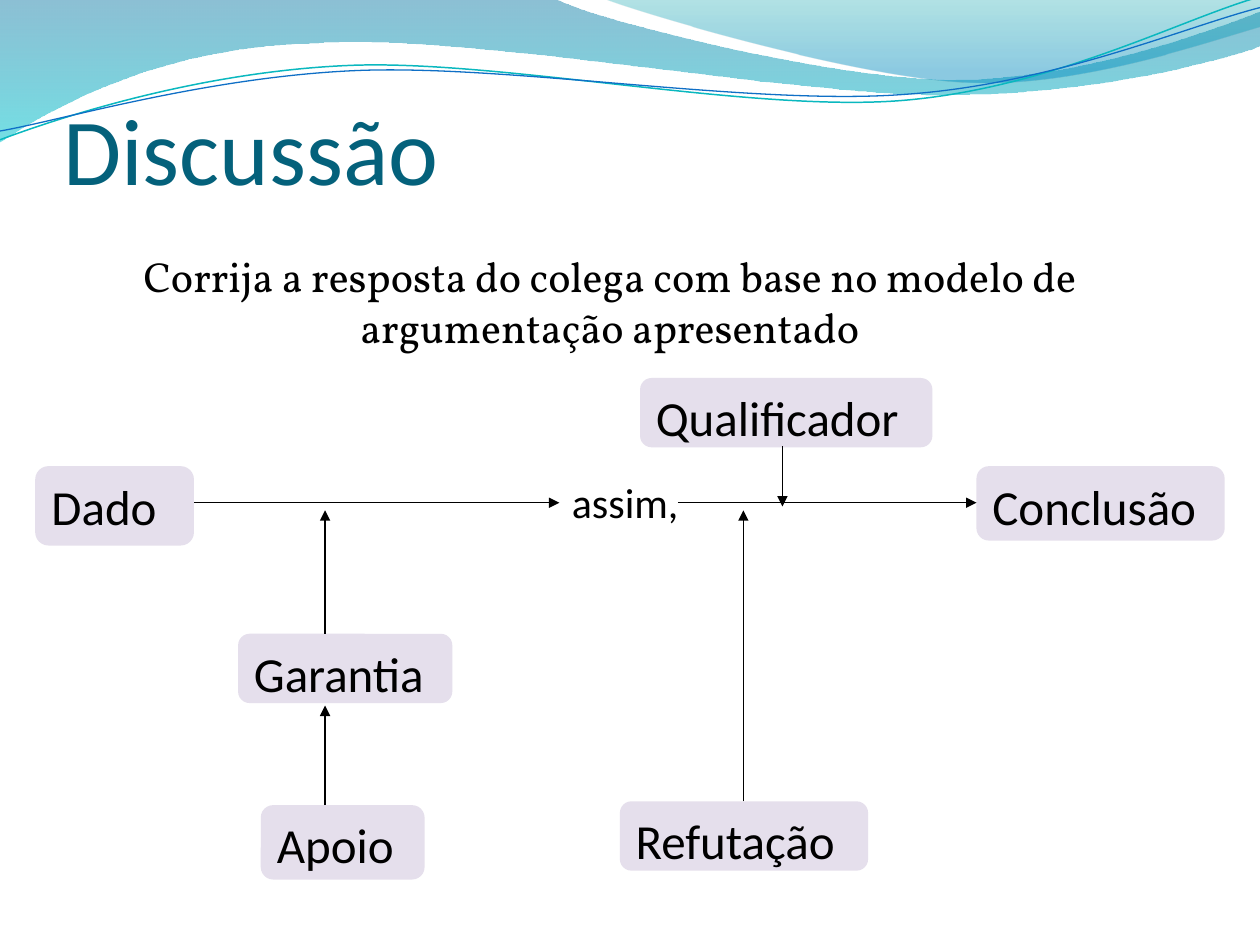
from dataclasses import dataclass
from math import cos, radians, sin

from lxml import etree
from pptx import Presentation
from pptx.dml.color import RGBColor
from pptx.enum.shapes import MSO_CONNECTOR, MSO_SHAPE
from pptx.enum.text import MSO_ANCHOR, MSO_AUTO_SIZE, PP_ALIGN
from pptx.oxml import parse_xml
from pptx.oxml.ns import nsdecls, qn
from pptx.util import Inches, Pt


@dataclass(frozen=True)
class Theme:
    """Colours, fonts and sizes of the slide."""
    title: str = "04617B"
    ink: str = "000000"
    box: str = "E5DFEC"
    blank: str = "FFFFFF"
    teal: str = "0AB8BF"
    blue: str = "0F6FC6"
    wave: tuple = ((0, "0074A1", 45), (100, "00C6CF", 55))
    crest: tuple = ((0, "00A1A9", 30), (80, "008BBF", 45))
    sans: str = "Calibri"
    serif: str = "Vollkorn"
    title_pt: int = 54
    node_pt: int = 28
    text_pt: int = 24
    line_pt: float = 0.75


THEME = Theme()
TILT = -2.7

WAVE = [(0, 0), (4.4, -0.01), (4.76, 0.17, 6.64, 0.63, 7.58, 0.63),
        (8.53, 0.63, 9.58, 0.26, 10, 0.09), (10.01, 0.36),
        (9.83, 0.44, 8.7, 0.76, 7.46, 0.75), (6.22, 0.75, 3.82, 0.28, 2.57, 0.34),
        (1.29, 0.36, 0.46, 0.83, -0.01, 1.13), (0, 0)]
CREST = [(4.79, -0.01), (5.09, 0.11, 6.82, 0.62, 7.69, 0.65),
         (8.56, 0.69, 9.61, 0.32, 10, 0.21), (10, 0), (4.79, -0.01)]
TEAL_CURVE = [(0, 1.11), (0.48, 0.93, 1.58, 0.57, 2.77, 0.52),
              (3.95, 0.47, 5.93, 0.89, 7.13, 0.8), (8.33, 0.71, 9.38, 0.15, 9.98, -0.02)]
BLUE_CURVE = [(0, 1.04), (0.47, 0.96, 1.64, 0.61, 2.83, 0.56),
              (4.03, 0.51, 5.97, 0.84, 7.17, 0.75), (8.36, 0.67, 9.41, 0.21, 10, 0.06)]

NODES = [("Dado", 0, 0.7, 1.26, 0.63), ("Conclusão", 7.47, 0.7, 1.97, 0.59),
         ("Garantia", 1.61, 2.03, 1.7, 0.55), ("Apoio", 1.79, 3.39, 1.3, 0.59),
         ("Refutação", 4.64, 3.36, 1.97, 0.55)]
ARROWS = [(1.26, 0.99, 4.16, 0.99), (2.3, 3.39, 2.3, 2.6), (5.1, 0.99, 7.47, 0.99),
          (5.62, 3.36, 5.62, 1.05), (2.3, 2.03, 2.3, 1.05), (5.93, 0.54, 5.93, 1.02)]


def rgb(value):
    """Turn a hex string into a colour."""
    return RGBColor.from_string(value)


def add_run(p, text, font, size, color):
    """Add one formatted run to a paragraph."""
    r = p.add_run()
    r.text = text
    r.font.name = font
    r.font.size = Pt(size)
    r.font.color.rgb = rgb(color)


def to_local(x, y, box, tilt):
    """Map a point on the slide into a tilted box."""
    left, top, width, height = box
    dx, dy = x - left - width / 2, y - top - height / 2
    a = radians(-tilt)
    return (Inches(dx * cos(a) - dy * sin(a) + width / 2),
            Inches(dx * sin(a) + dy * cos(a) + height / 2))


def add_curve(s, box, segments, tilt=0):
    """Build a freeform with cubic curves in the given box."""
    closed = segments[0] == segments[-1]
    ends = [tuple(map(Inches, seg[-2:])) for seg in segments]
    builder = s.shapes.build_freeform(*ends[0])
    builder.add_line_segments(ends[1:], close=closed)
    sp = builder.convert_to_shape()
    sp.shadow.inherit = False
    sp.fill.background()
    sp.left, sp.top, sp.width, sp.height = map(Inches, box)
    sp.rotation = tilt
    outline = next(sp.element.iter(qn("a:path")))
    for child in list(outline):
        outline.remove(child)
    outline.set("w", str(sp.width))
    outline.set("h", str(sp.height))
    for i, seg in enumerate(segments):
        tag = "a:moveTo" if i == 0 else "a:lnTo" if len(seg) == 2 else "a:cubicBezTo"
        step = etree.SubElement(outline, qn(tag))
        for x, y in zip(seg[::2], seg[1::2]):
            px, py = to_local(x, y, box, tilt)
            etree.SubElement(step, qn("a:pt"), x=str(px), y=str(py))
    if closed:
        etree.SubElement(outline, qn("a:close"))
    return sp


def set_gradient(sp, stops):
    """Fill a shape with a vertical, partly transparent gradient."""
    gs = "".join(f'<a:gs pos="{pos * 1000}"><a:srgbClr val="{color}">'
                 f'<a:alpha val="{alpha * 1000}"/></a:srgbClr></a:gs>'
                 for pos, color, alpha in stops)
    grad = parse_xml(f'<a:gradFill {nsdecls("a")}><a:gsLst>{gs}</a:gsLst>'
                     '<a:lin ang="5400000" scaled="0"/></a:gradFill>')
    old = sp.element.spPr.find(qn("a:noFill"))
    old.getparent().replace(old, grad)


def add_waves(s):
    """Draw the wave band along the top edge."""
    for box, path, stops in (((-0.01, -0.01, 10.02, 1.14), WAVE, THEME.wave),
                             ((4.79, -0.01, 5.21, 0.7), CREST, THEME.crest)):
        sp = add_curve(s, box, path)
        set_gradient(sp, stops)
        sp.line.fill.background()
    for box, path, color, width in (
            ((-0.02, 0.22, 10.02, 0.71), TEAL_CURVE, THEME.teal, 0.85),
            ((-0.02, 0.3, 10.03, 0.58), BLUE_CURVE, THEME.blue, THEME.line_pt)):
        sp = add_curve(s, box, path, TILT)
        sp.line.color.rgb = rgb(color)
        sp.line.width = Pt(width)


def add_title(s, left, top, width, height):
    """Place and format the title above the waves."""
    sp = s.shapes.title
    sp.element.getparent().append(sp.element)
    sp.left, sp.top, sp.width, sp.height = map(Inches, (left, top, width, height))
    tf = sp.text_frame
    tf.vertical_anchor = MSO_ANCHOR.BOTTOM
    tf.margin_left = tf.margin_right = tf.margin_bottom = 0
    tf.margin_top = Inches(0.05)
    p = tf.paragraphs[0]
    p.alignment = PP_ALIGN.LEFT
    add_run(p, "Discussão", THEME.sans, THEME.title_pt, THEME.title)


def add_prompt(s, left, top, width, height):
    """Add the centred instruction."""
    tf = s.shapes.add_textbox(*map(Inches, (left, top, width, height))).text_frame
    tf.word_wrap = True
    tf.auto_size = MSO_AUTO_SIZE.SHAPE_TO_FIT_TEXT
    p = tf.paragraphs[0]
    p.alignment = PP_ALIGN.CENTER
    add_run(p, "Corrija a resposta do colega com base no modelo de argumentação apresentado",
            THEME.serif, THEME.text_pt, THEME.ink)


def add_node(s, box, text, kind=MSO_SHAPE.ROUNDED_RECTANGLE, size=THEME.node_pt, color=THEME.box):
    """Add one labelled box of the diagram."""
    sp = s.shapes.add_shape(kind, *map(Inches, box))
    sp.shadow.inherit = False
    sp.fill.solid()
    sp.fill.fore_color.rgb = rgb(color)
    sp.line.fill.background()
    tf = sp.text_frame
    tf.word_wrap = True
    tf.vertical_anchor = MSO_ANCHOR.TOP
    p = tf.paragraphs[0]
    p.alignment = PP_ALIGN.LEFT
    p.space_after = Pt(10)
    add_run(p, text, THEME.sans, size, THEME.ink)


def add_arrow(s, x1, y1, x2, y2):
    """Add a straight arrow with a triangle head."""
    line = s.shapes.add_connector(MSO_CONNECTOR.STRAIGHT, *map(Inches, (x1, y1, x2, y2)))
    line.line.color.rgb = rgb(THEME.ink)
    line.line.width = Pt(THEME.line_pt)
    etree.SubElement(line.element.spPr.find(qn("a:ln")), qn("a:tailEnd"), type="triangle")
    etree.SubElement(line.element.spPr, qn("a:effectLst"))


def add_diagram(s, left, top):
    """Draw the argument model from its top-left corner."""
    for text, x, y, w, h in NODES:
        add_node(s, (left + x, top + y, w, h), text)
    add_node(s, (left + 4.16, top + 0.73, 1.18, 0.47), "assim,",
             MSO_SHAPE.RECTANGLE, THEME.text_pt, THEME.blank)
    add_node(s, (left + 4.8, top, 2.32, 0.55), "Qualificador")
    for x1, y1, x2, y2 in ARROWS:
        add_arrow(s, left + x1, top + y1, left + x2, top + y2)


def main():
    """Build and save the slide."""
    prs = Presentation()
    prs.slide_width, prs.slide_height = Inches(10), Inches(7.5)
    s = prs.slides.add_slide(prs.slide_layouts[5])
    add_waves(s)
    add_title(s, 0.5, 0.37, 9.08, 1.25)
    add_prompt(s, 0.98, 1.94, 7.72, 0.91)
    add_diagram(s, 0.28, 3)
    prs.save("out.pptx")


if __name__ == "__main__":
    main()
